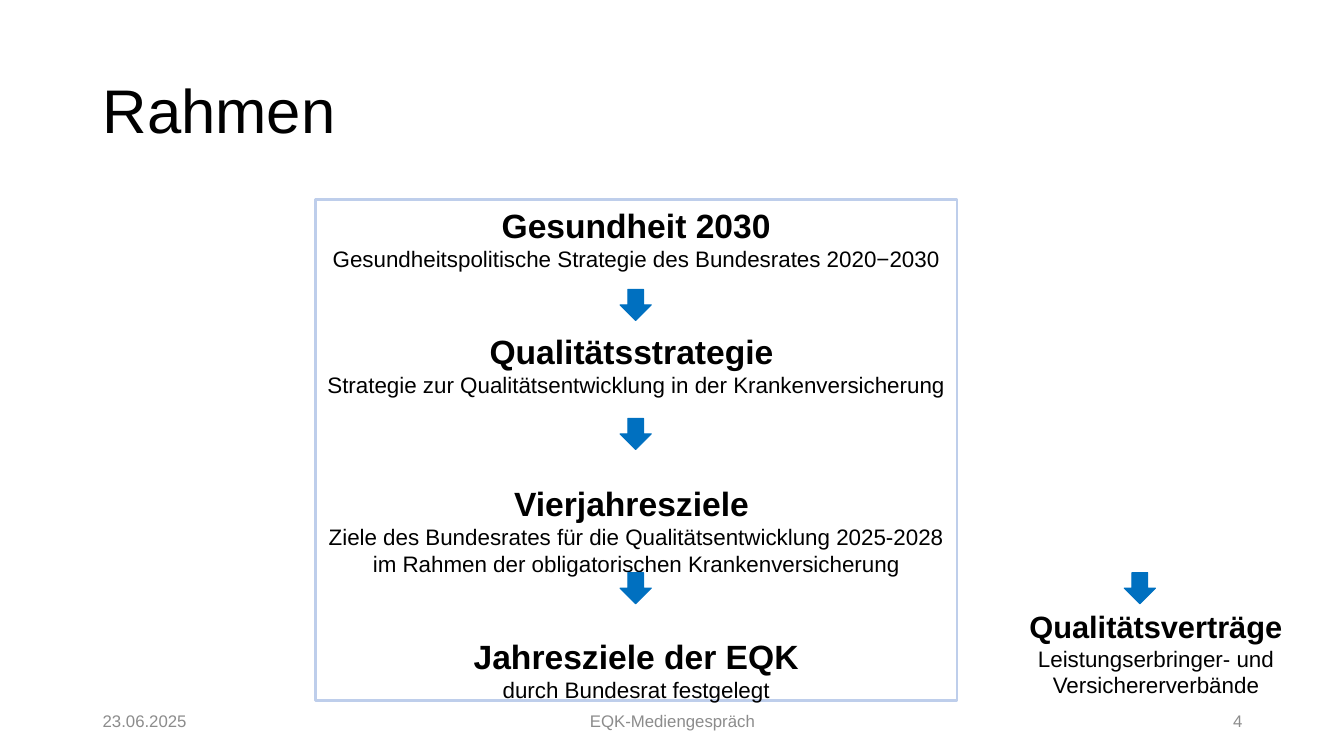
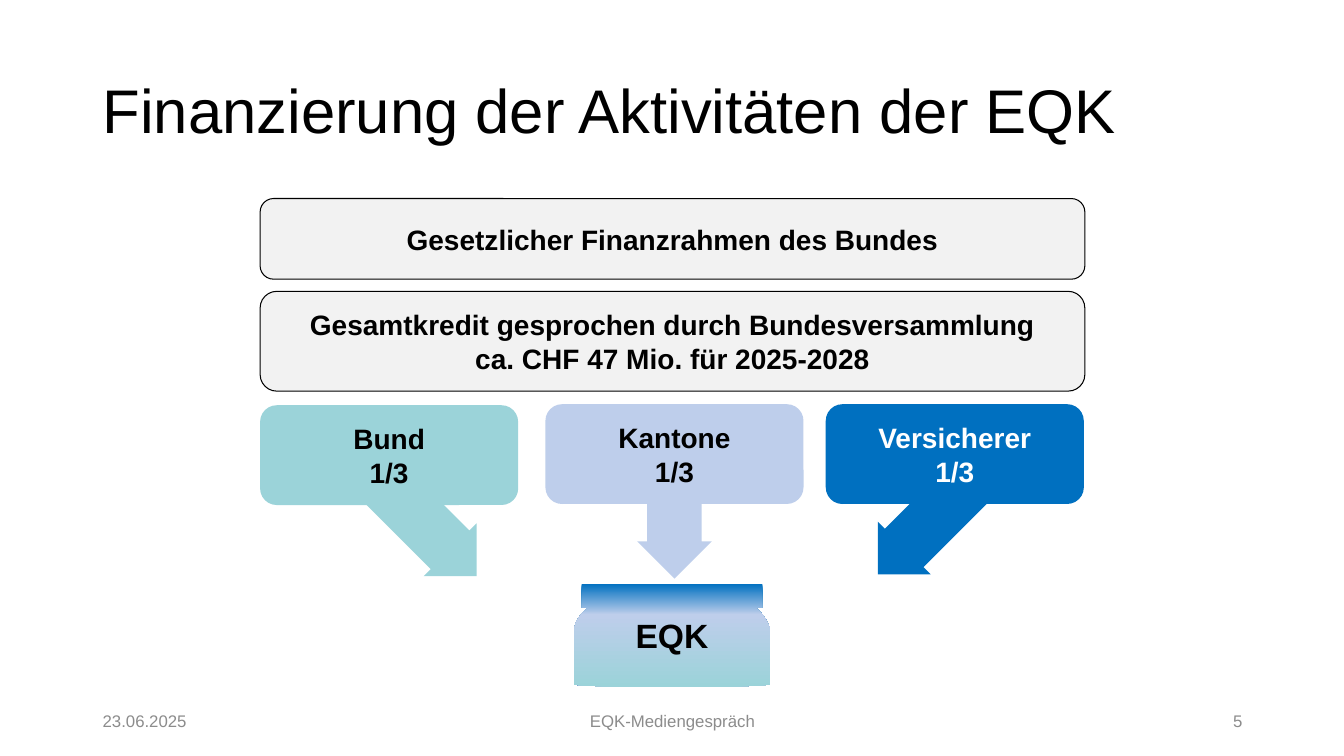
"""Build two slides on the framework and the funding of the EQK."""
from copy import deepcopy

from pptx import Presentation
from pptx.dml.color import RGBColor
from pptx.enum.shapes import MSO_SHAPE
from pptx.enum.text import MSO_ANCHOR, PP_ALIGN
from pptx.oxml.ns import qn
from pptx.util import Inches, Pt

BLACK, WHITE, GREY, PALE = "000000", "FFFFFF", "8C8C8C", "F2F2F2"
BLUE, LILAC, TEAL = "0070C0", "BECEEB", "9BD3D9"
LEFT, MID, RIGHT = PP_ALIGN.LEFT, PP_ALIGN.CENTER, PP_ALIGN.RIGHT

HEAD = {"size": Pt(44), "bold": False}
FOOT = {"size": Pt(12), "bold": False}
GOAL = {"size": Pt(24), "bold": True}
PACT = {"size": Pt(22), "bold": True}
NOTE = {"size": Pt(16), "bold": False}
LABEL = {"size": Pt(20), "bold": True}

TITLES = ["Rahmen", "Finanzierung der Aktivitäten der EQK"]
FOOTERS = [
    ("23.06.2025", 0.92, 3, LEFT),
    ("EQK-Mediengespräch", 4.42, 4.5, MID),
    ("{page}", 9.42, 3, RIGHT),
]
FIRST = 4

STEPS = [
    (0, "Gesundheit 2030",
     ["Gesundheitspolitische Strategie des Bundesrates 2020−2030"]),
    (42, "Qualitätsstrategie ",
     ["Strategie zur Qualitätsentwicklung in der Krankenversicherung"]),
    (61, "Vierjahresziele ",
     ["Ziele des Bundesrates für die Qualitätsentwicklung 2025-2028",
      "im Rahmen der obligatorischen Krankenversicherung"]),
    (42, "Jahresziele der EQK", ["durch Bundesrat festgelegt"]),
]
PACTS = [("Qualitätsverträge", PACT, 0),
         ("Leistungserbringer- und Versichererverbände", NOTE, 0)]
ARROWS = [(6.15, 2.87), (6.15, 4.15), (6.15, 5.68), (11.15, 5.68)]

FRAMES = [
    (1.97, 0.8, ["Gesetzlicher Finanzrahmen des Bundes"]),
    (2.89, 0.99, ["Gesamtkredit gesprochen durch Bundesversammlung",
                  "ca. CHF 47 Mio. für 2025-2028"]),
]
PAYERS = [
    ("Bund", 2.58, 4.02, TEAL, BLACK, (3.77, 4.3, 0.74, 1.66), 315),
    ("Kantone", 5.41, 4.01, LILAC, BLACK, (6.32, 4.65, 0.74, 1.09), 0),
    ("Versicherer", 8.19, 4.01, BLUE, WHITE, (8.92, 4.29, 0.74, 1.65), 45),
]
SHARE = "1/3"

POT = [
    (5.77, 5.79), (7.56, 5.79), (7.56, 6.03), (7.5, 6.03), (7.52, 6.05),
    (7.57, 6.1, 7.61, 6.16, 7.63, 6.22), (7.64, 6.26), (7.64, 6.79),
    (7.64, 6.8, 7.2, 6.82, 6.66, 6.82), (6.12, 6.82, 5.69, 6.8, 5.69, 6.79),
    (5.69, 6.26), (5.7, 6.22), (5.71, 6.16, 5.75, 6.1, 5.81, 6.05),
    (5.82, 6.03), (5.77, 6.03),
]
SHADES = [(0, BLUE), (0.3, LILAC), (1, TEAL)]


def paint(code):
    """Turn a hex string into a colour."""
    return RGBColor.from_string(code)


def write(shape, lines, color=BLACK, align=MID, anchor=MSO_ANCHOR.MIDDLE):
    """Fill a shape with lines of (text, format, space before)."""
    frame = shape.text_frame
    frame.word_wrap = True
    frame.vertical_anchor = anchor
    for spot, (text, style, gap) in enumerate(lines):
        para = frame.add_paragraph() if spot else frame.paragraphs[0]
        para.alignment = align
        if gap:
            para.space_before = Pt(gap)
        run = para.add_run()
        run.text = text
        for key, value in {"name": "Arial", **style}.items():
            setattr(run.font, key, value)
        run.font.color.rgb = paint(color)


def label(slide, box, lines, **look):
    """Add a text box."""
    area = slide.shapes.add_textbox(*map(Inches, box))
    write(area, lines, **look)
    return area


def draw(slide, kind, box, fill=None, line=None, width=0.75):
    """Add a flat preset shape."""
    shape = slide.shapes.add_shape(kind, *map(Inches, box))
    shape.shadow.inherit = False
    if fill:
        shape.fill.solid()
        shape.fill.fore_color.rgb = paint(fill)
    else:
        shape.fill.background()
    if line:
        shape.line.color.rgb = paint(line)
        shape.line.width = Pt(width)
    else:
        shape.line.fill.background()
    return shape


def start(deck, spot):
    """Add a slide with its title and footers."""
    slide = deck.slides.add_slide(deck.slide_layouts[6])
    title = label(slide, (0.92, 0.4, 11.5, 1.45), [(TITLES[spot], HEAD, 0)],
                  align=LEFT)
    title.text_frame.paragraphs[0].line_spacing = 0.9
    for text, left, width, align in FOOTERS:
        label(slide, (left, 6.95, width, 0.4),
              [(text.format(page=FIRST + spot), FOOT, 0)],
              color=GREY, align=align)
    return slide


def trace(parts, count=8):
    """Turn points and cubic curves into a list of points."""
    dots = []
    for part in parts:
        if len(part) == 2:
            dots.append(part)
            continue
        curve = [dots[-1], part[:2], part[2:4], part[4:]]
        for step in range(1, count + 1):
            t = step / count
            rates = ((1 - t) ** 3, 3 * t * (1 - t) ** 2,
                     3 * t * t * (1 - t), t ** 3)
            dots.append(tuple(sum(r * dot[axis] for r, dot in zip(rates, curve))
                              for axis in (0, 1)))
    return [(Inches(x), Inches(y)) for x, y in dots]


def shade(shape, stops):
    """Give a shape a gradient from top to bottom."""
    shape.fill.gradient()
    shape.fill.gradient_angle = 270
    group = shape._element.spPr.find(qn("a:gradFill")).find(qn("a:gsLst"))
    while len(group) < len(stops):
        group.append(deepcopy(group[0]))
    for stop, (place, code) in zip(shape.fill.gradient_stops, stops):
        stop.position = place
        stop.color.rgb = paint(code)


def goals(deck):
    """Build the slide on the framework."""
    slide = start(deck, 0)
    lines = []
    for gap, head, notes in STEPS:
        lines.append((head, GOAL, gap))
        lines.extend((note, NOTE, 0) for note in notes)
    panel = draw(slide, MSO_SHAPE.RECTANGLE, (3.13, 1.98, 6.36, 4.97),
                 line=LILAC, width=1.5)
    write(panel, lines, anchor=MSO_ANCHOR.TOP)
    label(slide, (9.68, 5.98, 3.57, 1.11), PACTS, anchor=MSO_ANCHOR.TOP)
    for left, top in ARROWS:
        draw(slide, MSO_SHAPE.DOWN_ARROW, (left, top, 0.31, 0.31), BLUE, BLUE)


def funds(deck):
    """Build the slide on the funding."""
    slide = start(deck, 1)
    for top, height, texts in FRAMES:
        frame = draw(slide, MSO_SHAPE.ROUNDED_RECTANGLE,
                     (2.58, top, 8.18, height), PALE, BLACK)
        write(frame, [(text, LABEL, 0) for text in texts])
    for name, left, top, fill, color, box, turn in PAYERS:
        arrow = draw(slide, MSO_SHAPE.DOWN_ARROW, box, fill)
        arrow.adjustments[0], arrow.adjustments[1] = 0.73, 0.5
        arrow.rotation = turn
        payer = draw(slide, MSO_SHAPE.ROUNDED_RECTANGLE,
                     (left, top, 2.56, 0.99), fill)
        write(payer, [(name, LABEL, 0), (SHARE, LABEL, 0)], color)
    first, *rest = trace(POT)
    maker = slide.shapes.build_freeform(*first)
    maker.add_line_segments(rest, close=True)
    pot = maker.convert_to_shape()
    pot.shadow.inherit = False
    pot.line.fill.background()
    shade(pot, SHADES)
    write(pot, [("EQK", GOAL, 0)])


def main():
    """Build and save the deck."""
    deck = Presentation()
    deck.slide_width, deck.slide_height = Inches(13.33), Inches(7.5)
    goals(deck)
    funds(deck)
    deck.save("out.pptx")


if __name__ == "__main__":
    main()
